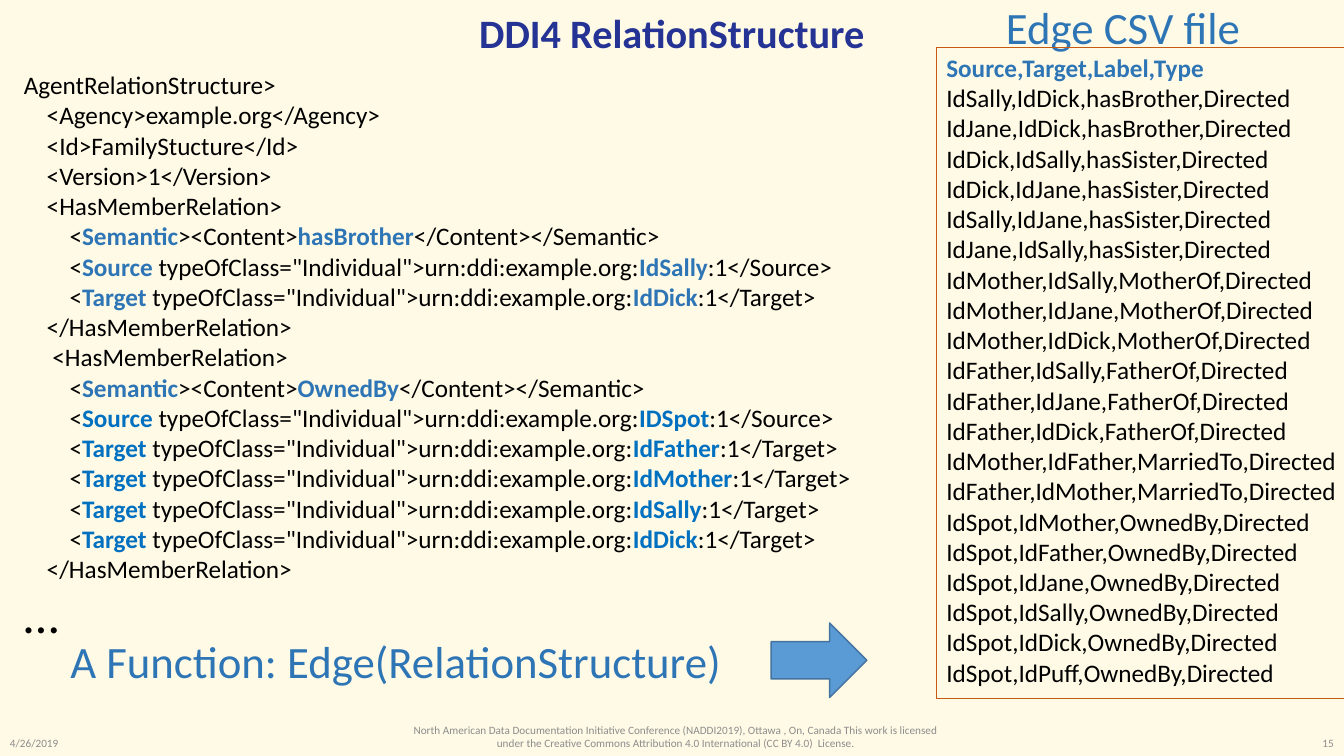
from pptx import Presentation
from pptx.dml.color import RGBColor
from pptx.enum import shapes, text
from pptx.util import Pt

CREAM = RGBColor(0xFF, 0xFA, 0xE6)
NAVY = RGBColor(0x25, 0x34, 0x94)
BLUE = RGBColor(0x2E, 0x75, 0xB6)
BRIGHT = RGBColor(0x00, 0x70, 0xC0)
ARROW_FILL = RGBColor(0x5B, 0x9B, 0xD5)
ARROW_LINE = RGBColor(0x43, 0x73, 0x9E)
ORANGE = RGBColor(0xC5, 0x5A, 0x11)
GREY = RGBColor(0x8C, 0x8C, 0x8C)
BLACK = RGBColor(0, 0, 0)
LEFT, CENTER, RIGHT = text.PP_ALIGN.LEFT, text.PP_ALIGN.CENTER, text.PP_ALIGN.RIGHT
TOP, MIDDLE = text.MSO_ANCHOR.TOP, text.MSO_ANCHOR.MIDDLE
FONT = "Calibri"
INDENT = 16.3

TITLE = "DDI4 RelationStructure"
# Indent level, line with its highlights between asterisks, highlight colour
XML_LINES = [
    (0, "AgentRelationStructure>", BLUE),
    (1, "<Agency>example.org</Agency>", BLUE),
    (1, "<Id>FamilyStucture</Id>", BLUE),
    (1, "<Version>1</Version>", BLUE),
    (1, "<HasMemberRelation>", BLUE),
    (2, "<*Semantic*><Content>*hasBrother*</Content></Semantic>", BLUE),
    (2, '<*Source *typeOfClass="Individual">urn:ddi:example.org:*IdSally*:1</Source>', BLUE),
    (2, '<*Target *typeOfClass="Individual">urn:ddi:example.org:*IdDick*:1</Target>', BLUE),
    (1, "</HasMemberRelation>", BLUE),
    (1.25, "<HasMemberRelation>", BLUE),
    (2, "<*Semantic*><Content>*OwnedBy*</Content></Semantic>", BLUE),
    (2, '<*Source *typeOfClass="Individual">urn:ddi:example.org:*IDSpot*:1</Source>', BRIGHT),
    (2, '<*Target *typeOfClass="Individual">urn:ddi:example.org:*IdFather*:1</Target>', BRIGHT),
    (2, '<*Target *typeOfClass="Individual">urn:ddi:example.org:*IdMother*:1</Target>', BRIGHT),
    (2, '<*Target *typeOfClass="Individual">urn:ddi:example.org:*IdSally*:1</Target>', BRIGHT),
    (2, '<*Target *typeOfClass="Individual">urn:ddi:example.org:*IdDick*:1</Target>', BRIGHT),
    (1, "</HasMemberRelation>", BLUE),
]
CSV_HEADER = "Source,Target,Label,Type"
EDGES = [
    ("Sally", "Dick", "hasBrother"), ("Jane", "Dick", "hasBrother"),
    ("Dick", "Sally", "hasSister"), ("Dick", "Jane", "hasSister"),
    ("Sally", "Jane", "hasSister"), ("Jane", "Sally", "hasSister"),
    ("Mother", "Sally", "MotherOf"), ("Mother", "Jane", "MotherOf"),
    ("Mother", "Dick", "MotherOf"), ("Father", "Sally", "FatherOf"),
    ("Father", "Jane", "FatherOf"), ("Father", "Dick", "FatherOf"),
    ("Mother", "Father", "MarriedTo"), ("Father", "Mother", "MarriedTo"),
    ("Spot", "Mother", "OwnedBy"), ("Spot", "Father", "OwnedBy"),
    ("Spot", "Jane", "OwnedBy"), ("Spot", "Sally", "OwnedBy"),
    ("Spot", "Dick", "OwnedBy"), ("Spot", "Puff", "OwnedBy"),
]
# Text, box, size, colour, alignment, anchor, wrap
LABELS = [
    ("4/26/2019", (0, 521.3, 216, 18.7), 8, GREY, LEFT, MIDDLE, True),
    ("North American Data Documentation Initiative Conference (NADDI2019), Ottawa , On, "
     "Canada This work is licensed under the Creative Commons Attribution 4.0 "
     "International (CC BY 4.0)  License.",
     (279.4, 512, 406.8, 28), 8, GREY, CENTER, MIDDLE, True),
    ("15", (743.8, 521.3, 216, 18.7), 8, GREY, RIGHT, MIDDLE, True),
    ("A Function: Edge(RelationStructure)", (43.2, 449.3, 485.3, 46), 32, BLUE, LEFT, TOP, False),
    ("Edge CSV file", (711.4, -3.6, 183.6, 46), 32, BLUE, LEFT, TOP, False),
]


def place(box):
    return [Pt(v) for v in box]


def add_run(p, words, size, color, bold=False):
    r = p.add_run()
    r.text = words
    r.font.name, r.font.size, r.font.bold = FONT, Pt(size), bold
    r.font.color.rgb = color


def next_paragraph(tf):
    """Return the first paragraph while it is empty, otherwise a new one."""
    p = tf.paragraphs[0]
    return tf.add_paragraph() if p.runs else p


prs = Presentation()
prs.slide_width, prs.slide_height = Pt(960), Pt(540)
s = prs.slides.add_slide(prs.slide_layouts[5])
s.background.fill.solid()
s.background.fill.fore_color.rgb = CREAM

title = s.shapes.title
title.left, title.top, title.width, title.height = place((66, 5, 828, 41))
tf = title.text_frame
tf.auto_size = text.MSO_AUTO_SIZE.NONE
tf.vertical_anchor = MIDDLE
p = tf.paragraphs[0]
p.alignment, p.line_spacing = CENTER, 0.9
add_run(p, TITLE, 28.8, NAVY, True)

for words, box, size, color, align, anchor, wrap in LABELS:
    tf = s.shapes.add_textbox(*place(box)).text_frame
    tf.word_wrap, tf.vertical_anchor = wrap, anchor
    p = tf.paragraphs[0]
    p.alignment = align
    add_run(p, words, size, color)

tf = s.shapes.add_textbox(*place((10, 46.1, 609, 422))).text_frame
tf.word_wrap = False
for level, line, highlight in XML_LINES:
    p = next_paragraph(tf)
    p.alignment = LEFT
    pPr = p._p.get_or_add_pPr()
    pPr.set("marL", str(Pt(level * INDENT)))
    pPr.set("indent", "0")
    for i, part in enumerate(line.split("*")):
        marked = i % 2 == 1
        add_run(p, part, 18, highlight if marked else BLACK, marked)
add_run(next_paragraph(tf), "…", 36, BLACK)

arrow = s.shapes.add_shape(shapes.MSO_SHAPE.RIGHT_ARROW, *place((550.8, 445, 68.4, 53.3)))
arrow.shadow.inherit = False
arrow.fill.solid()
arrow.fill.fore_color.rgb = ARROW_FILL
arrow.line.color.rgb, arrow.line.width = ARROW_LINE, Pt(1)

csv_box = s.shapes.add_shape(shapes.MSO_SHAPE.RECTANGLE, *place((668.9, 33.8, 296, 465.1)))
csv_box.shadow.inherit = False
csv_box.fill.background()
csv_box.line.color.rgb, csv_box.line.width = ORANGE, Pt(0.75)
tf = csv_box.text_frame
tf.word_wrap, tf.vertical_anchor = False, TOP
rows = [f"Id{source},Id{target},{label},Directed" for source, target, label in EDGES]
for i, row in enumerate([CSV_HEADER] + rows):
    p = next_paragraph(tf)
    p.alignment = LEFT
    add_run(p, row, 18, BLACK if i else BLUE, i == 0)

prs.save("out.pptx")
